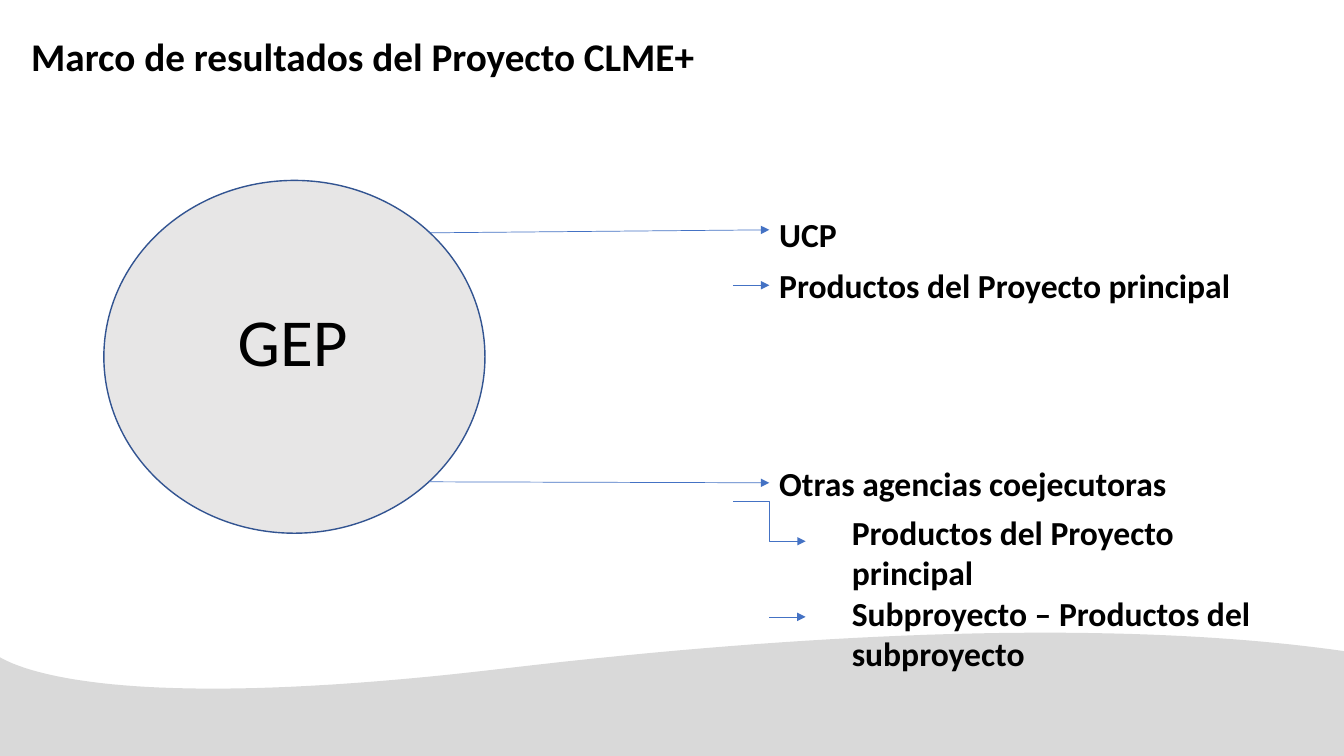
from dataclasses import dataclass

from lxml import etree
from pptx import Presentation
from pptx import util as u
from pptx.dml.color import RGBColor
from pptx.enum import shapes, text
from pptx.oxml.ns import qn


@dataclass(frozen=True)
class Theme:
    font: str = "Calibri"
    ink: RGBColor = RGBColor.from_string("000000")
    wave: RGBColor = RGBColor.from_string("D9D9D9")
    circle: RGBColor = RGBColor.from_string("E7E6E6")
    outline: RGBColor = RGBColor.from_string("325491")
    arrow: RGBColor = RGBColor.from_string("4472C4")
    title_size: int = 28
    label_size: int = 24
    circle_size: int = 48


def bezier(start, first, second, end, steps=40):
    for step in range(1, steps + 1):
        t = step / steps
        weights = ((1 - t) ** 3, 3 * t * (1 - t) ** 2, 3 * t * t * (1 - t), t**3)
        points = (start, first, second, end)
        yield tuple(sum(w * p[axis] for w, p in zip(weights, points)) for axis in (0, 1))


class Painter:
    def __init__(self, slide, theme):
        self.slide = slide
        self.theme = theme

    def fill(self, shape, color):
        shape.shadow.inherit = False
        shape.fill.solid()
        shape.fill.fore_color.rgb = color

    def set_text(self, box, lines, size, bold):
        frame = box.text_frame
        frame_format = {
            "word_wrap": True,
            "auto_size": text.MSO_AUTO_SIZE.SHAPE_TO_FIT_TEXT,
            "vertical_anchor": text.MSO_ANCHOR.TOP,
        }
        for name, value in frame_format.items():
            setattr(frame, name, value)
        para = frame.paragraphs[0]
        para.alignment = text.PP_ALIGN.LEFT
        para.line_spacing = 1.0
        font_format = {"name": self.theme.font, "size": u.Pt(size), "bold": bold}
        for index, line in enumerate(lines):
            if index:
                para.add_line_break()
            span = para.add_run()
            span.text = line
            for name, value in font_format.items():
                setattr(span.font, name, value)
            span.font.color.rgb = self.theme.ink

    def title(self, line, *bounds):
        box = self.slide.shapes.title
        for name, value in zip(("left", "top", "width", "height"), bounds):
            setattr(box, name, u.Inches(value))
        self.set_text(box, [line], self.theme.title_size, True)

    def label(self, lines, *bounds, size=None, bold=True):
        box = self.slide.shapes.add_textbox(*map(u.Inches, bounds))
        self.set_text(box, lines, size or self.theme.label_size, bold)

    def circle(self, *bounds):
        shape = self.slide.shapes.add_shape(
            shapes.MSO_SHAPE.OVAL, *map(u.Inches, bounds)
        )
        self.fill(shape, self.theme.circle)
        shape.line.color.rgb = self.theme.outline
        shape.line.width = u.Pt(1)

    def wave(self, start, curves, corners):
        outline = [start]
        for curve in curves:
            outline.extend(bezier(outline[-1], *curve))
        outline.extend(corners)
        points = [(u.Inches(x), u.Inches(y)) for x, y in outline]
        builder = self.slide.shapes.build_freeform(*points[0])
        builder.add_line_segments(points[1:], close=True)
        shape = builder.convert_to_shape()
        self.fill(shape, self.theme.wave)
        shape.line.fill.background()

    def arrow(self, *ends, kind=shapes.MSO_CONNECTOR.STRAIGHT):
        arrow = self.slide.shapes.add_connector(kind, *map(u.Inches, ends))
        arrow.line.color.rgb = self.theme.arrow
        arrow.line.width = u.Pt(0.5)
        properties = arrow._element.spPr
        etree.SubElement(properties.find(qn("a:ln")), qn("a:tailEnd"), type="triangle")
        etree.SubElement(properties, qn("a:effectLst"))


def main():
    deck = Presentation()
    deck.slide_width, deck.slide_height = u.Inches(13.33), u.Inches(7.5)
    theme = Theme()
    page = Painter(deck.slides.add_slide(deck.slide_layouts[5]), theme)

    page.wave(
        (13.33, 6.46),
        [
            ((11.65, 6.22), (9.02, 6.16), (5.02, 6.63)),
            ((1.33, 7.07), (0.26, 6.68), (-0.02, 6.51)),
        ],
        [(-0.02, 7.5), (13.33, 7.5)],
    )
    page.title("Marco de resultados del Proyecto CLME+", 0.21, 0.27, 9.02, 0.57)
    page.circle(1.03, 1.79, 3.78, 3.5)
    page.label(["GEP"], 2.26, 2.92, 1.73, 0.91, size=theme.circle_size, bold=False)

    label_left, indent = 7.63, 0.36
    for line, top in (
        ("UCP", 2.07),
        ("Productos del Proyecto principal", 2.58),
        ("Otras agencias coejecutoras", 4.54),
    ):
        page.label([line], label_left, top, 5.32, 0.5)
    page.label(
        ["Productos del Proyecto principal", "Subproyecto – Productos del subproyecto"],
        label_left + 2 * indent, 5.03, 4.38, 1.72,
    )

    for start, end in ((2.31, 2.28), (4.78, 4.79)):
        page.arrow(4.25, start, label_left, end)
    for left, top in ((label_left - indent, 2.83), (label_left, 6.12)):
        page.arrow(left, top, left + indent, top)
    page.arrow(
        label_left - indent, 4.97, label_left + indent, 5.37,
        kind=shapes.MSO_CONNECTOR.ELBOW,
    )

    deck.save("out.pptx")


if __name__ == "__main__":
    main()
